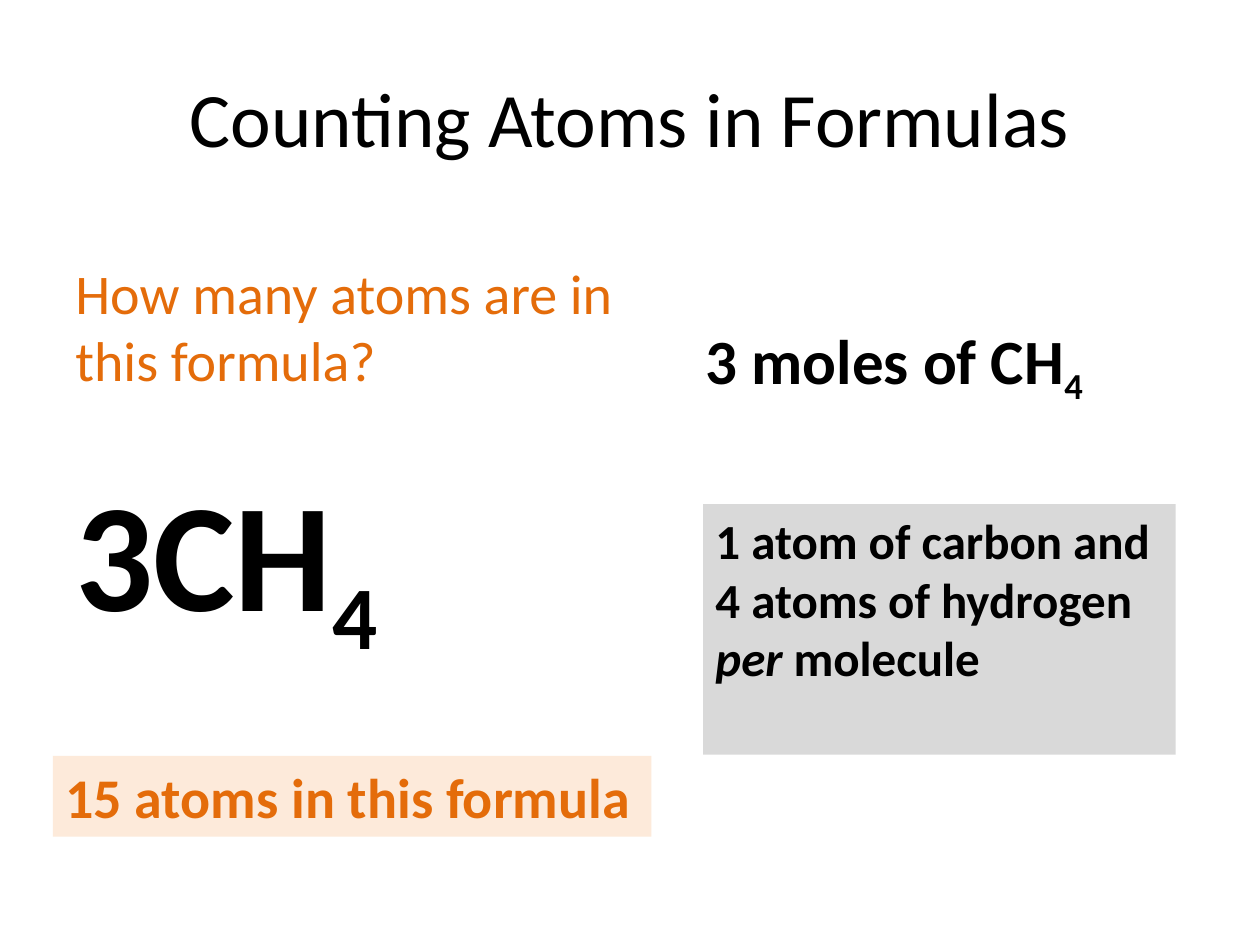
from pptx import Presentation
from pptx.dml.color import RGBColor
from pptx.enum.text import MSO_ANCHOR, PP_ALIGN
from pptx.util import Emu, Pt

PX = 9144  # 100 px to the inch
FONT = "Calibri"
BLACK, ORANGE, GRAY, PEACH = "000000", "E46C0A", "D9D9D9", "FDEADA"

# Content: a paragraph is a list of (text, style) runs
TITLE = [[("Counting Atoms in Formulas", "")]]
TITLE_BOX = (50, 30, 900, 125)
BOXES = [
    dict(box=(50, 358, 325, 158), size=88, bold=True,
         paragraphs=[[("3CH", ""), ("4", "subscript")]]),
    dict(box=(50, 200, 467, 118), size=32, color=ORANGE,
         paragraphs=[[("How many atoms are in this formula?", "")]]),
    dict(box=(550, 250, 358, 71), size=36, bold=True,
         paragraphs=[[("3 moles of CH", ""), ("4", "subscript")]]),
    dict(box=(558, 400, 375, 199), size=28, bold=True, fill=GRAY,
         paragraphs=[[("1 atom of carbon and", "")],
                     [("4 atoms of hydrogen ", ""), ("per", "italic"),
                      (" molecule", "")]]),
    dict(box=(42, 600, 475, 64), size=32, bold=True, color=ORANGE, fill=PEACH,
         paragraphs=[[("15 atoms in this formula", "")]]),
]


def rgb(value):
    return RGBColor.from_string(value)


def emu(box):
    return [Emu(length * PX) for length in box]


def write(frame, paragraphs, size, color=BLACK, bold=False,
          align=PP_ALIGN.LEFT, anchor=MSO_ANCHOR.TOP):
    frame.word_wrap = True
    frame.vertical_anchor = anchor
    for index, runs in enumerate(paragraphs):
        paragraph = frame.add_paragraph() if index else frame.paragraphs[0]
        paragraph.alignment = align
        for text, style in runs:
            run = paragraph.add_run()
            run.text = text
            font = run.font
            font.name, font.size, font.bold = FONT, Pt(size), bold
            font.color.rgb = rgb(color)
            if style == "italic":
                font.italic = True
            elif style == "subscript":
                run._r.get_or_add_rPr().set("baseline", "-25000")


def add_box(slide, box, paragraphs, fill=None, **text_format):
    shape = slide.shapes.add_textbox(*emu(box))
    if fill:
        shape.fill.solid()
        shape.fill.fore_color.rgb = rgb(fill)
    write(shape.text_frame, paragraphs, **text_format)


def main():
    presentation = Presentation()
    presentation.slide_width, presentation.slide_height = emu((1000, 750))
    slide = presentation.slides.add_slide(presentation.slide_layouts[5])

    # Title
    title = slide.shapes.title
    title.left, title.top, title.width, title.height = emu(TITLE_BOX)
    write(title.text_frame, TITLE, size=44, align=PP_ALIGN.CENTER,
          anchor=MSO_ANCHOR.MIDDLE)

    # Question, formulas and answers
    for item in BOXES:
        add_box(slide, **item)

    presentation.save("out.pptx")


if __name__ == "__main__":
    main()
